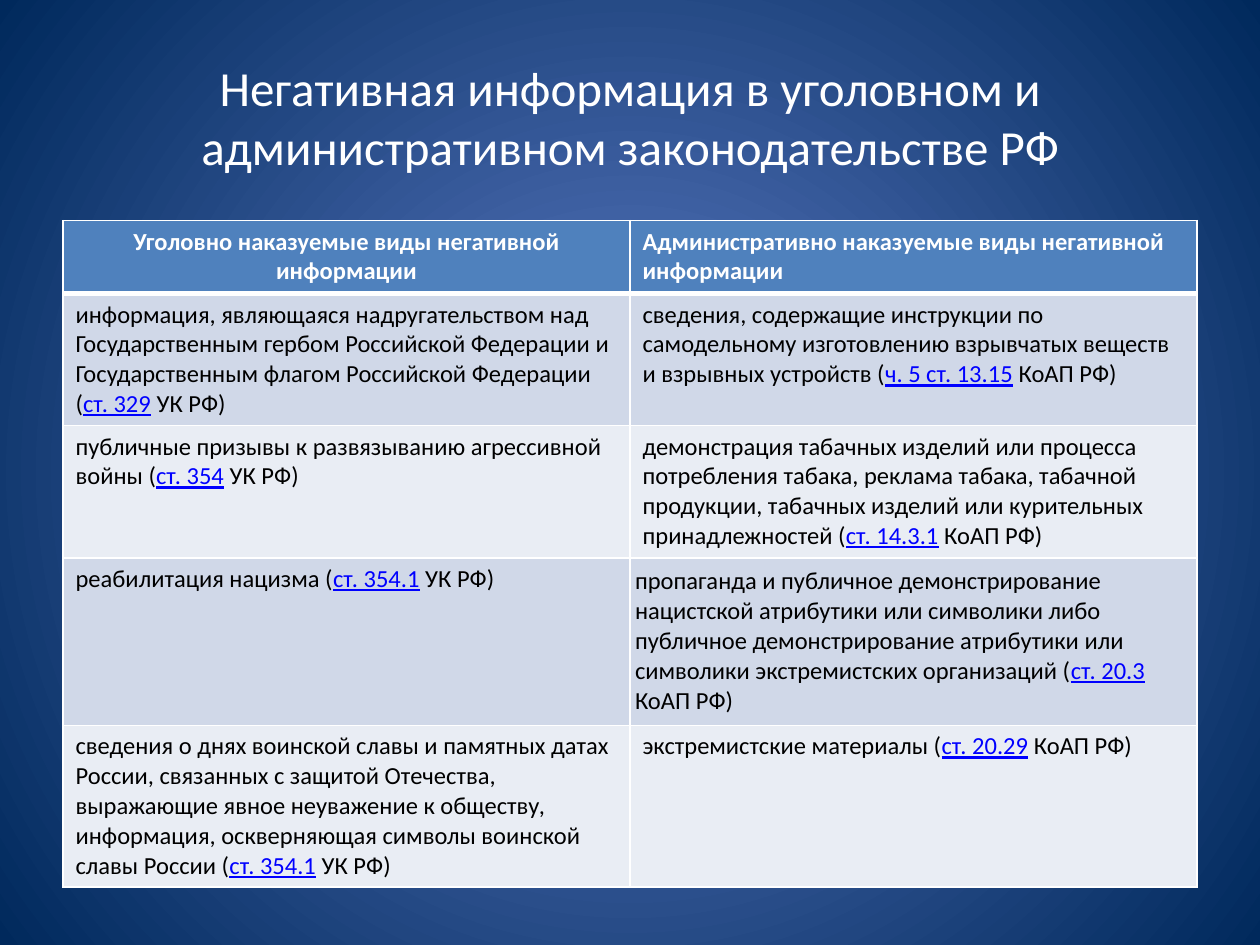
from dataclasses import dataclass

from lxml import etree
from pptx import Presentation
from pptx.dml.color import RGBColor
from pptx.enum.text import MSO_ANCHOR, PP_ALIGN
from pptx.oxml.ns import qn
from pptx.util import Inches, Pt

CENTER, LEFT = PP_ALIGN.CENTER, PP_ALIGN.LEFT
MIDDLE = MSO_ANCHOR.MIDDLE
FONT = "Calibri"
COLORS = {
    "white": "FFFFFF", "text": "000000", "link": "0000FF",
    "header": "4F81BD", "odd": "D0D8E8", "even": "E9EDF4",
    "glow": "5E7CC5", "edge": "00295C",
}
TITLE_LINES = ["Негативная информация в уголовном и", "административном законодательстве РФ"]
HEADERS = [
    ("Уголовно наказуемые виды негативной информации", CENTER),
    ("Административно наказуемые виды негативной информации", LEFT),
]
CODES = ["УК РФ", "КоАП РФ"]
ROW_HEIGHTS = [0.58, 1.04, 1.05, 1.33, 1.28]


@dataclass
class Offence:
    description: str
    article: str
    margins: tuple[float, float] = (0.1, 0.05)


OFFENCES = [
    (Offence("информация, являющаяся надругательством над Государственным гербом Российской Федерации "
             "и Государственным флагом Российской Федерации", "ст. 329"),
     Offence("сведения, содержащие инструкции по самодельному изготовлению взрывчатых веществ "
             "и взрывных устройств", "ч. 5 ст. 13.15")),
    (Offence("публичные призывы к развязыванию агрессивной войны", "ст. 354"),
     Offence("демонстрация табачных изделий или процесса потребления табака, реклама табака, "
             "табачной продукции, табачных изделий или курительных принадлежностей", "ст. 14.3.1")),
    (Offence("реабилитация нацизма", "ст. 354.1"),
     Offence("пропаганда и публичное демонстрирование нацистской атрибутики или символики либо "
             "публичное демонстрирование атрибутики или символики экстремистских организаций",
             "ст. 20.3", (0.04, 0.07))),
    (Offence("сведения о днях воинской славы и памятных датах России, связанных с защитой Отечества, "
             "выражающие явное неуважение к обществу, информация, оскверняющая символы воинской "
             "славы России", "ст. 354.1"),
     Offence("экстремистские материалы", "ст. 20.29")),
]


def color(name: str) -> RGBColor:
    return RGBColor.from_string(COLORS[name])


def add_span(para, text: str, color_name: str, **formats) -> None:
    span = para.add_run()
    span.text = text
    for name, value in {"name": FONT, "size": Pt(14), **formats}.items():
        setattr(span.font, name, value)
    span.font.color.rgb = color(color_name)


def paint_background(page) -> None:
    fill = page.background.fill
    fill.gradient()
    for stop, name in zip(fill.gradient_stops, ("glow", "edge")):
        stop.color.rgb = color(name)
    gradient = next(page.background._cSld.iter(qn("a:gradFill")))
    gradient.remove(gradient.find(qn("a:lin")))
    circle = etree.SubElement(gradient, qn("a:path"), path="circle")
    etree.SubElement(circle, qn("a:fillToRect"), l="50000", t="50000", r="50000", b="50000")


def style_cell(cell, fill_name: str, bottom_width: int = 1) -> None:
    properties = cell._tc.get_or_add_tcPr()
    for side, width in {"L": 1, "R": 1, "T": 1, "B": bottom_width}.items():
        line = etree.SubElement(properties, qn(f"a:ln{side}"), w=str(Pt(width)))
        solid = etree.SubElement(line, qn("a:solidFill"))
        etree.SubElement(solid, qn("a:srgbClr"), val=COLORS["white"])
    cell.fill.solid()
    cell.fill.fore_color.rgb = color(fill_name)


def write_offence(cell, offence: Offence, code: str) -> None:
    side, top = (Inches(margin) for margin in offence.margins)
    margins = {"margin_left": side, "margin_right": side, "margin_top": top, "margin_bottom": top}
    for name, value in margins.items():
        setattr(cell, name, value)
    para = cell.text_frame.paragraphs[0]
    add_span(para, f"{offence.description} (", "text")
    add_span(para, offence.article, "link", underline=True)
    add_span(para, f" {code})", "text")


def add_title(page) -> None:
    title = page.shapes.title
    box = {"left": 0.5, "top": 0.3, "width": 9, "height": 1.25}
    for name, value in box.items():
        setattr(title, name, Inches(value))
    title.text_frame.vertical_anchor = MIDDLE
    para = title.text_frame.paragraphs[0]
    para.alignment = CENTER
    for index, line in enumerate(TITLE_LINES):
        if index:
            para.add_line_break()
        add_span(para, line, "white", size=Pt(28))


def add_offence_table(page) -> None:
    table = page.shapes.add_table(
        len(ROW_HEIGHTS), len(HEADERS), Inches(0.5), Inches(1.75), Inches(9), Inches(sum(ROW_HEIGHTS))
    ).table
    for row, height in zip(table.rows, ROW_HEIGHTS):
        row.height = Inches(height)
    for column, (text, alignment) in enumerate(HEADERS):
        cell = table.cell(0, column)
        style_cell(cell, "header", bottom_width=3)
        para = cell.text_frame.paragraphs[0]
        para.alignment = alignment
        add_span(para, text, "white", bold=True)
    for row, offences in enumerate(OFFENCES, start=1):
        for column, (offence, code) in enumerate(zip(offences, CODES)):
            cell = table.cell(row, column)
            style_cell(cell, "odd" if row % 2 else "even")
            write_offence(cell, offence, code)


def main() -> None:
    deck = Presentation()
    deck.slide_width, deck.slide_height = Inches(10), Inches(7.5)
    page = deck.slides.add_slide(deck.slide_layouts.get_by_name("Title Only"))
    paint_background(page)
    add_title(page)
    add_offence_table(page)
    deck.save("out.pptx")


if __name__ == "__main__":
    main()
